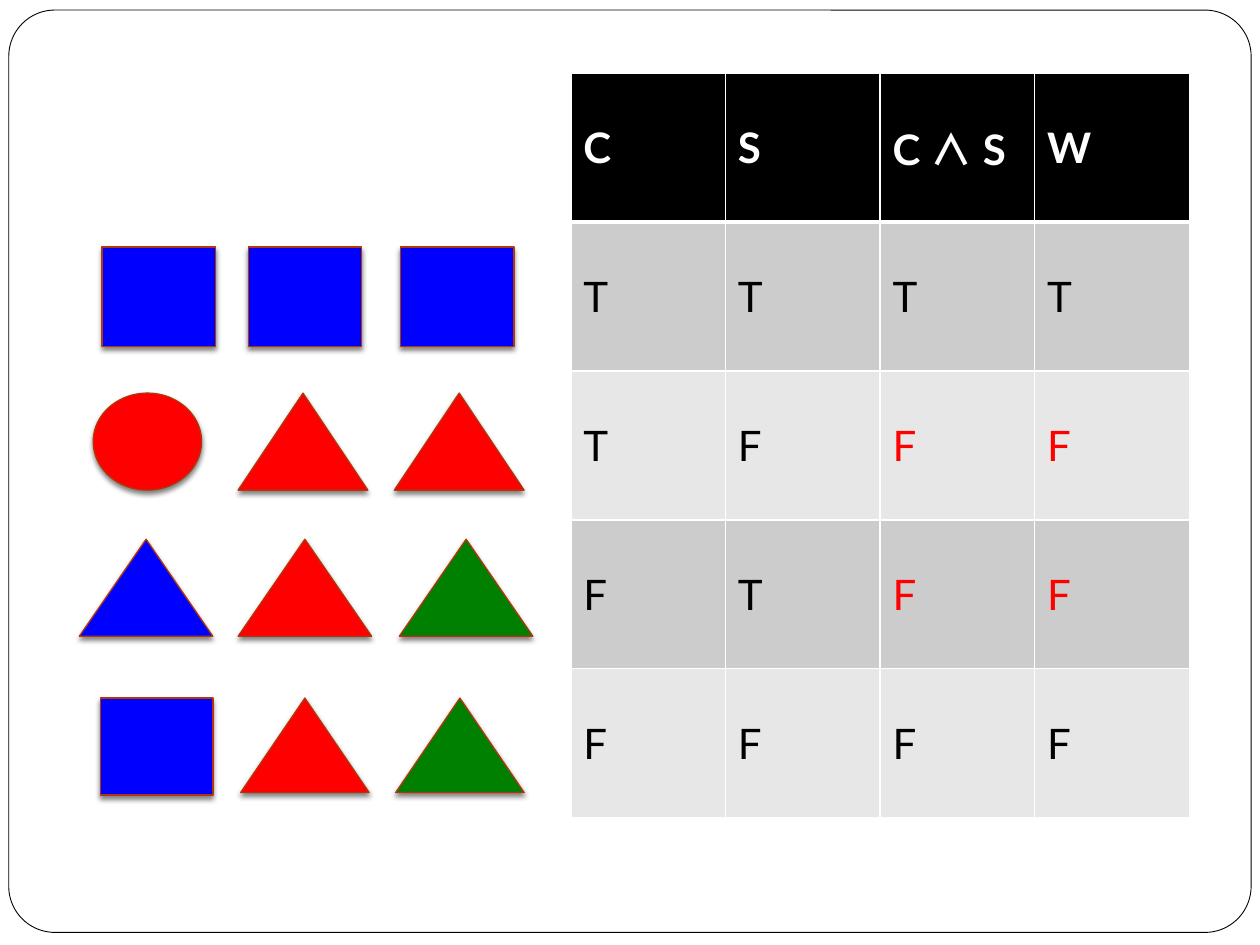
from lxml.etree import SubElement
from pptx import Presentation
from pptx.dml.color import RGBColor
from pptx.enum.shapes import MSO_SHAPE
from pptx.enum.text import MSO_ANCHOR
from pptx.oxml.ns import qn
from pptx.util import Inches, Pt

COLUMNS, ROWS = 100, 75
BLACK, WHITE, RED, BLUE, GREEN = "000000", "FFFFFF", "FF0000", "0000FF", "008000"
OUTLINE = "B1360B"
BANDS = ["CCCCCC", "E7E7E7"]
SQUARE, TRIANGLE, CIRCLE = MSO_SHAPE.RECTANGLE, MSO_SHAPE.ISOSCELES_TRIANGLE, MSO_SHAPE.OVAL

# Each example: top, then (kind, fill, left, width, height), in grid units.
EXAMPLES = [
    (19.6, [(SQUARE, BLUE, left, 9, 7.9) for left in (8.1, 19.7, 31.8)]),
    (31.2, [(CIRCLE, RED, 7.4, 8.6, 7.7),
            (TRIANGLE, RED, 18.9, 10.3, 7.7),
            (TRIANGLE, RED, 31.3, 10.3, 7.7)]),
    (42.8, [(TRIANGLE, BLUE, 6.3, 10.6, 7.7),
            (TRIANGLE, RED, 18.9, 10.6, 7.7),
            (TRIANGLE, GREEN, 31.7, 10.6, 7.7)]),
    (55.4, [(SQUARE, BLUE, 8, 8.9, 7.7),
            (TRIANGLE, RED, 19.1, 10.2, 7.5),
            (TRIANGLE, GREEN, 31.4, 10.2, 7.5)]),
]
HEADINGS = ["C", "S", "C ∧ S", "W"]
TRUTH_VALUES = ["TTTT", "TFFF", "FTFF", "FFFF"]
RED_CELLS = {(row, column) for row in (2, 3) for column in (2, 3)}


def color(value):
    return RGBColor.from_string(value)


def add_solid_fill(parent, value):
    fill = SubElement(parent, qn("a:solidFill"))
    return SubElement(fill, qn("a:srgbClr"), val=value)


def add_text(paragraph, text, *, font, size, fill, bold=False):
    run = paragraph.add_run()
    run.text = text
    run.font.name = font
    run.font.size = Pt(size)
    run.font.bold = bold
    run.font.color.rgb = color(fill)
    for script in ("a:ea", "a:sym"):
        SubElement(run._r.get_or_add_rPr(), qn(script), typeface=font)


def add_shadow(shape):
    """Give the shape a soft half-transparent shadow straight below it."""
    shape.shadow.inherit = False
    effects = shape._element.spPr.find(qn("a:effectLst"))
    shadow = SubElement(effects, qn("a:outerShdw"), blurRad=str(Pt(3)), dist=str(Pt(2)),
                        dir=str(90 * 60000), rotWithShape="0")
    tone = SubElement(shadow, qn("a:srgbClr"), val=BLACK)
    SubElement(tone, qn("a:alpha"), val="50000")


class TruthTableSlide:
    """Style and current slide; lengths are columns and rows of a 100 by 75 grid."""

    font, symbol_font, text_size = "Lato", "Noto Sans CJK JP", 24

    def __init__(self, presentation):
        self.slide = presentation.slides.add_slide(presentation.slide_layouts[6])
        self.column = presentation.slide_width / COLUMNS
        self.row = presentation.slide_height / ROWS

    def box(self, left, top, width, height):
        return (round(left * self.column), round(top * self.row),
                round(width * self.column), round(height * self.row))

    def shape(self, shapes, kind, box, fill, line, weight):
        shape = shapes.add_shape(kind, *self.box(*box))
        shape.shadow.inherit = False
        shape.fill.solid()
        shape.fill.fore_color.rgb = color(fill)
        shape.line.color.rgb = color(line)
        shape.line.width = Pt(weight)
        return shape

    def frame(self):
        frame = self.shape(self.slide.shapes, MSO_SHAPE.ROUNDED_RECTANGLE,
                           (0.7, 0.8, 98.6, 73.2), WHITE, BLACK, 0.5)
        frame.adjustments[0] = 0.05

    def example(self, top, figures):
        group = self.slide.shapes.add_group_shape()
        for kind, fill, left, width, height in figures:
            figure = self.shape(group.shapes, kind, (left, top, width, height),
                                fill, OUTLINE, 0.75)
            add_shadow(figure)

    def table(self, box, headings, values):
        rows = [headings, *values]
        table = self.slide.shapes.add_table(len(rows), len(headings), *self.box(*box)).table
        table.horz_banding = False
        for row, texts in enumerate(rows):
            for column, text in enumerate(texts):
                self.cell(table.cell(row, column), text, row, column)

    def cell(self, cell, text, row, column):
        header = row == 0
        self.borders(cell, top=3 if row == 1 else 1, bottom=3 if header else 1)
        cell.vertical_anchor = MSO_ANCHOR.MIDDLE
        cell.fill.solid()
        cell.fill.fore_color.rgb = color(BLACK if header else BANDS[(row - 1) % 2])
        fill = WHITE if header else RED if (row, column) in RED_CELLS else BLACK
        before, symbol, after = text.partition("∧")
        for part in filter(None, (before, symbol, after)):
            add_text(cell.text_frame.paragraphs[0], part, size=self.text_size, fill=fill,
                     font=self.symbol_font if part == "∧" else self.font, bold=header)

    def borders(self, cell, top, bottom):
        properties = cell._tc.get_or_add_tcPr()
        for side, weight in (("L", 1), ("R", 1), ("T", top), ("B", bottom)):
            border = SubElement(properties, qn(f"a:ln{side}"), w=str(Pt(weight)))
            add_solid_fill(border, WHITE)


def main():
    presentation = Presentation()
    presentation.slide_width, presentation.slide_height = Inches(10), Inches(7.5)
    slide = TruthTableSlide(presentation)
    slide.frame()
    for top, figures in EXAMPLES:
        slide.example(top, figures)
    slide.table((45.3, 5.8, 49.1, 59.1), HEADINGS, TRUTH_VALUES)
    presentation.save("out.pptx")


if __name__ == "__main__":
    main()
